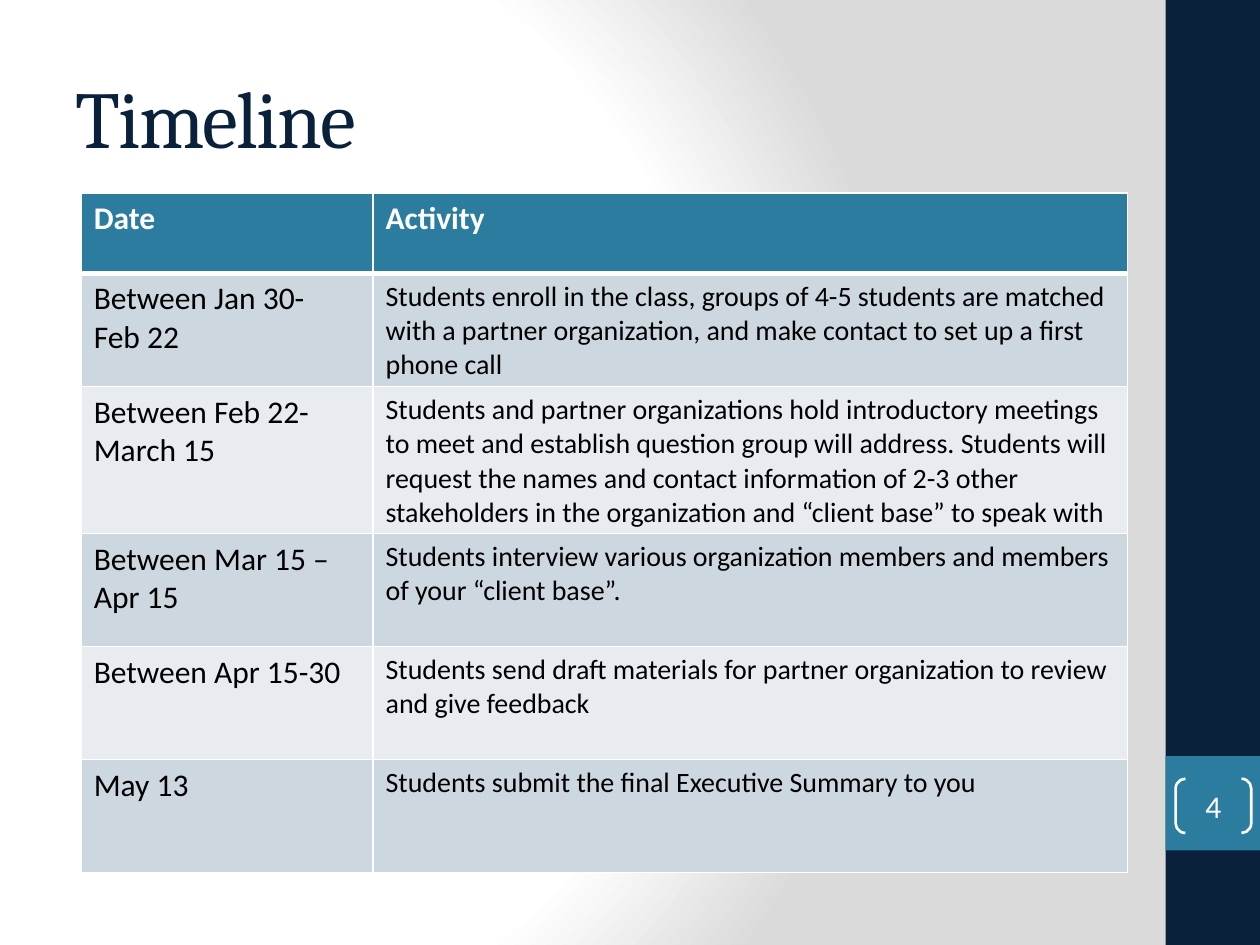
import pptx
import pptx.util
import pptx.dml.color
import pptx.enum.shapes
import pptx.enum.text
import pptx.oxml
import pptx.oxml.ns

Pt = pptx.util.Pt
RGBColor = pptx.dml.color.RGBColor
MSO_SHAPE = pptx.enum.shapes.MSO_SHAPE
PP_ALIGN = pptx.enum.text.PP_ALIGN
MIDDLE = pptx.enum.text.MSO_ANCHOR.MIDDLE

# Content
TITLE = "Timeline"
PAGE_NUMBER = "4"
HEADER = ("Date", "Activity")
ACTIVITIES = [
    ("Between Jan 30-\nFeb 22",
     "Students enroll in the class, groups of 4-5 students are matched with a "
     "partner organization, and make contact to set up a first phone call"),
    ("Between Feb 22-March 15",
     "Students and partner organizations hold introductory meetings to meet and "
     "establish question group will address. Students will request the names and "
     "contact information of 2-3 other stakeholders in the organization and "
     "“client base” to speak with"),
    ("Between Mar 15 – Apr 15",
     "Students interview various organization members and members of your “client base”."),
    ("Between Apr 15-30",
     "Students send draft materials for partner organization to review and give feedback"),
    ("May 13", "Students submit the final Executive Summary to you"),
]

# Colours and measures in points
NAVY = RGBColor(0x09, 0x21, 0x3B)
TEAL = RGBColor(0x2C, 0x7C, 0x9F)
WHITE = RGBColor(0xFF, 0xFF, 0xFF)
BLACK = RGBColor(0, 0, 0)
SILVER = RGBColor(0xDA, 0xDA, 0xDA)
BANDS = (RGBColor(0xCD, 0xD7, 0xDF), RGBColor(0xE8, 0xEC, 0xF0))
SLIDE_WIDTH, SLIDE_HEIGHT = 720, 540
SIDEBAR_WIDTH = 54
SIDEBAR_LEFT = SLIDE_WIDTH - SIDEBAR_WIDTH
TABLE_LEFT, TABLE_TOP = 46.4, 110.2
COLUMN_WIDTHS = (166.8, 431.2)
ROW_HEIGHTS = (46, 64.6, 81.4, 64.6, 64.6, 64.6)

# Text formats
TITLE_FONT = {"name": "Cambria", "size": Pt(46)}
HEADER_FONT = {"name": "Calibri", "size": Pt(18), "bold": True}
DATE_FONT = {"name": "Calibri", "size": Pt(18), "bold": False}
ACTIVITY_FONT = {"name": "Calibri", "size": Pt(16), "bold": False}
NUMBER_FONT = {"name": "Calibri", "size": Pt(18)}


def write(frame, text, font, color, **paragraph_format):
    frame.word_wrap = True
    frame.text = text
    for paragraph in frame.paragraphs:
        for name, value in paragraph_format.items():
            setattr(paragraph, name, value)
        for run in paragraph.runs:
            for name, value in font.items():
                setattr(run.font, name, value)
            run.font.color.rgb = color


def add_shape(slide, kind, left, top, width, height, fill=None):
    shape = slide.shapes.add_shape(kind, Pt(left), Pt(top), Pt(width), Pt(height))
    shape.shadow.inherit = False
    shape.line.fill.background()
    if fill is None:
        shape.fill.background()
    else:
        shape.fill.solid()
        shape.fill.fore_color.rgb = fill
    return shape


def set_background(slide):
    slide.background.fill.gradient()
    old = slide.background.fill._fill._gradFill
    stops = "".join(
        f'<a:gs pos="{position * 1000}"><a:srgbClr val="{color}"/></a:gs>'
        for position, color in ((0, WHITE), (75, WHITE), (100, SILVER)))
    gradient = pptx.oxml.parse_xml(
        f'<a:gradFill {pptx.oxml.ns.nsdecls("a")} rotWithShape="1">'
        f'<a:gsLst>{stops}</a:gsLst><a:path path="circle">'
        '<a:fillToRect l="20000" t="50000" r="100000" b="50000"/>'
        '</a:path></a:gradFill>')
    old.getparent().replace(old, gradient)


def set_borders(cell, bottom):
    properties = cell._tc.get_or_add_tcPr()
    widths = {"lnL": 1, "lnR": 1, "lnT": 1, "lnB": bottom}
    for index, (side, width) in enumerate(widths.items()):
        properties.insert(index, pptx.oxml.parse_xml(
            f'<a:{side} {pptx.oxml.ns.nsdecls("a")} w="{Pt(width)}">'
            f'<a:solidFill><a:srgbClr val="{WHITE}"/></a:solidFill></a:{side}>'))


def add_timeline(slide):
    table = slide.shapes.add_table(
        len(ROW_HEIGHTS), len(COLUMN_WIDTHS), Pt(TABLE_LEFT), Pt(TABLE_TOP),
        Pt(sum(COLUMN_WIDTHS)), Pt(sum(ROW_HEIGHTS))).table
    for column, width in zip(table.columns, COLUMN_WIDTHS):
        column.width = Pt(width)
    for index, content in enumerate([HEADER] + ACTIVITIES):
        table.rows[index].height = Pt(ROW_HEIGHTS[index])
        is_header = index == 0
        for column, text in enumerate(content):
            cell = table.cell(index, column)
            cell.fill.solid()
            cell.fill.fore_color.rgb = TEAL if is_header else BANDS[(index - 1) % 2]
            # The header's rule and the first row's top edge are the same line
            set_borders(cell, 3 if is_header else 1)
            if is_header:
                write(cell.text_frame, text, HEADER_FONT, WHITE)
            elif column == 0:
                write(cell.text_frame, text, DATE_FONT, BLACK)
            else:
                write(cell.text_frame, text, ACTIVITY_FONT, BLACK, space_after=Pt(12))


def main():
    presentation = pptx.Presentation()
    presentation.slide_width, presentation.slide_height = Pt(SLIDE_WIDTH), Pt(SLIDE_HEIGHT)
    slide = presentation.slides.add_slide(presentation.slide_layouts[6])
    set_background(slide)

    # Sidebar with its number block
    add_shape(slide, MSO_SHAPE.RECTANGLE, SIDEBAR_LEFT, 0, SIDEBAR_WIDTH, SLIDE_HEIGHT, NAVY)
    add_shape(slide, MSO_SHAPE.RECTANGLE, SIDEBAR_LEFT, 432, SIDEBAR_WIDTH, SIDEBAR_WIDTH, TEAL)

    # Title
    title = slide.shapes.add_textbox(Pt(36), Pt(21.6), Pt(600), Pt(90)).text_frame
    title.vertical_anchor = MIDDLE
    write(title, TITLE, TITLE_FONT, NAVY)
    title.paragraphs[0].runs[0].font._element.set("spc", "-100")

    # Page number in brackets
    number = add_shape(slide, MSO_SHAPE.DOUBLE_BRACKET, 671.8, 445, 43.2, 31)
    number.adjustments[0] = 0.18
    number.line.color.rgb = WHITE
    number.line.width = Pt(1.5)
    frame = number.text_frame
    for side in ("left", "top", "right", "bottom"):
        setattr(frame, f"margin_{side}", 0)
    frame.vertical_anchor = MIDDLE
    write(frame, PAGE_NUMBER, NUMBER_FONT, WHITE, alignment=PP_ALIGN.CENTER)

    add_timeline(slide)
    presentation.save("out.pptx")


if __name__ == "__main__":
    main()
